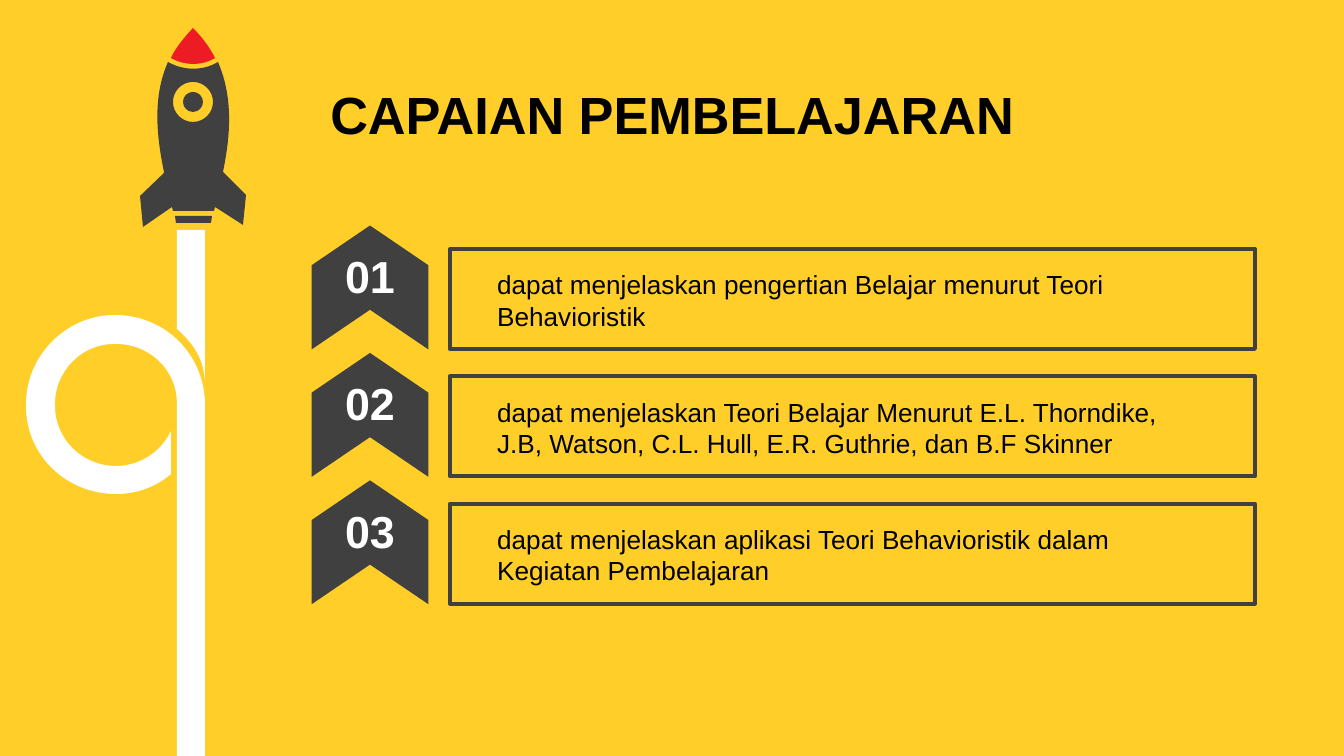
from lxml import etree
from pptx import Presentation
from pptx import util as u
from pptx.dml.color import RGBColor
from pptx.enum import shapes, text
from pptx.oxml.ns import qn

SCALE = 914400 / 134.4
COLORS = {"back": "FFCE29", "dark": "404040", "white": "FFFFFF",
          "red": "ED1C24", "black": "000000"}
FONT = "Arial"
TITLE = "CAPAIAN PEMBELAJARAN"
GOALS = [
    ("01", ["dapat menjelaskan pengertian Belajar menurut Teori",
            "Behavioristik"]),
    ("02", ["dapat menjelaskan Teori Belajar Menurut E.L. Thorndike,",
            "J.B, Watson, C.L. Hull, E.R. Guthrie, dan B.F Skinner"]),
    ("03", ["dapat menjelaskan aplikasi Teori Behavioristik dalam",
            "Kegiatan Pembelajaran"]),
]
PITCH = 127.4


def disc(x, y, r):
    k = 0.55 * r
    return [(x, y - r),
            (x + k, y - r, x + r, y - k, x + r, y),
            (x + r, y + k, x + k, y + r, x, y + r),
            (x - k, y + r, x - r, y + k, x - r, y),
            (x - r, y - k, x - k, y - r, x, y - r)]


# Outlines: a pair is a corner, six numbers are a Bezier curve.
LOOP = [
    [(199, 406), (205, 406), (205, 418, 203, 430, 199, 438)],
    [(113, 315), (163, 314, 203, 352, 205, 402), (177, 402),
     (176, 368, 148, 343, 114, 344), (81, 344, 54, 372, 55, 406),
     (55, 439, 82, 466, 116, 466), (140, 466, 161, 452, 171, 431),
     (171, 474), (156, 487, 137, 494, 116, 494),
     (67, 494, 26, 456, 26, 406), (25, 357, 65, 316, 113, 315)],
]
TRAIL = [[(177, 230), (205, 230), (205, 383), (204, 359, 194, 344, 177, 329),
          (177, 230)]]
ROCKET = [
    [(175, 216), (212, 216), (212, 219, 211, 221, 211, 223), (176, 223)],
    disc(193, 102, 10),
    disc(193, 102, 20),
    [(168, 62), (184, 71, 203, 71, 218, 62), (234, 99, 230, 138, 223, 172),
     (246, 195), (243, 225), (215, 207), (214, 211), (173, 211),
     (173, 210, 172, 208, 172, 207), (143, 227), (140, 196), (164, 173),
     (164, 172), (157, 138, 152, 98, 168, 62)],
]
NOSE = [[(193, 28), (203, 38, 210, 48, 215, 58), (202, 66, 185, 66, 171, 58),
         (176, 47, 184, 38, 193, 28)]]


def px(n):
    return u.Emu(round(n * SCALE))


def color(name):
    return RGBColor.from_string(COLORS[name])


def paint(shape, fill=None, line=None):
    shape.shadow.inherit = False
    if fill:
        shape.fill.solid()
        shape.fill.fore_color.rgb = color(fill)
    else:
        shape.fill.background()
    if line:
        shape.line.color.rgb = color(line)
        shape.line.width = u.Pt(2)
    else:
        shape.line.fill.background()


def add(slide, kind, box, fill=None, line=None):
    shape = slide.shapes.add_shape(kind, *map(px, box))
    paint(shape, fill, line)
    return shape


def bend(shape, parts):
    """Turn the straight segments that stand for curves into Beziers."""
    lines = list(shape._element.iter(qn("a:lnTo")))
    for line, part in zip(lines, parts):
        if len(part) == 6:
            curve = etree.Element(qn("a:cubicBezTo"))
            for x, y in zip(part[::2], part[1::2]):
                etree.SubElement(curve, qn("a:pt"), x=str(px(x) - shape.left),
                                 y=str(px(y) - shape.top))
            line.getparent().replace(line, curve)


def draw(slide, outlines, fill):
    pen = None
    for outline in outlines:
        dots = [(px(part[-2]), px(part[-1])) for part in outline]
        if pen is None:
            pen = slide.shapes.build_freeform(*dots[0])
        else:
            pen.move_to(*dots[0])
        pen.add_line_segments(dots[1:], close=False)
    shape = pen.convert_to_shape()
    bend(shape, [part for outline in outlines for part in outline[1:]])
    paint(shape, fill)


def write(shape, lines, size, ink, bold=False, align=text.PP_ALIGN.LEFT,
          anchor=text.MSO_ANCHOR.TOP):
    frame = shape.text_frame
    frame.text = "\n".join(lines)
    frame.word_wrap = True
    frame.vertical_anchor = anchor
    for para in frame.paragraphs:
        para.alignment = align
        for run in para.runs:
            run.font.name = FONT
            run.font.size = u.Pt(size)
            run.font.bold = bold
            run.font.color.rgb = color(ink)


def main():
    deck = Presentation()
    deck.slide_width, deck.slide_height = px(1344), px(756)
    slide = deck.slides.add_slide(deck.slide_layouts[5])
    slide.background.fill.solid()
    slide.background.fill.fore_color.rgb = color("back")
    kind = shapes.MSO_SHAPE
    center = text.PP_ALIGN.CENTER

    title = slide.shapes.title
    title.left, title.top, title.width, title.height = map(
        px, (0, 72, 1344, 84))
    write(title, [TITLE], 28, "black", True, center, text.MSO_ANCHOR.MIDDLE)

    draw(slide, LOOP, "white")
    draw(slide, TRAIL, "white")
    draw(slide, ROCKET, "dark")
    add(slide, kind.RECTANGLE, (177, 398, 28, 358), "white")
    draw(slide, NOSE, "red")

    for i, (number, lines) in enumerate(GOALS):
        y = i * PITCH
        add(slide, kind.RECTANGLE, (450, 249 + y, 805, 100), line="dark")
        label = add(slide, kind.ROUND_2_SAME_RECTANGLE,
                    (480, 258 + y, 740, 81))
        write(label, lines, 14, "black")
        arrow = add(slide, kind.CHEVRON, (308, 229 + y, 124, 117), "dark")
        arrow.adjustments[0] = 0.34
        arrow.rotation = 270
        badge = slide.shapes.add_textbox(*map(px, (329, 242 + y, 82, 67)))
        write(badge, [number], 24, "white", True, center)

    deck.save("out.pptx")


if __name__ == "__main__":
    main()
